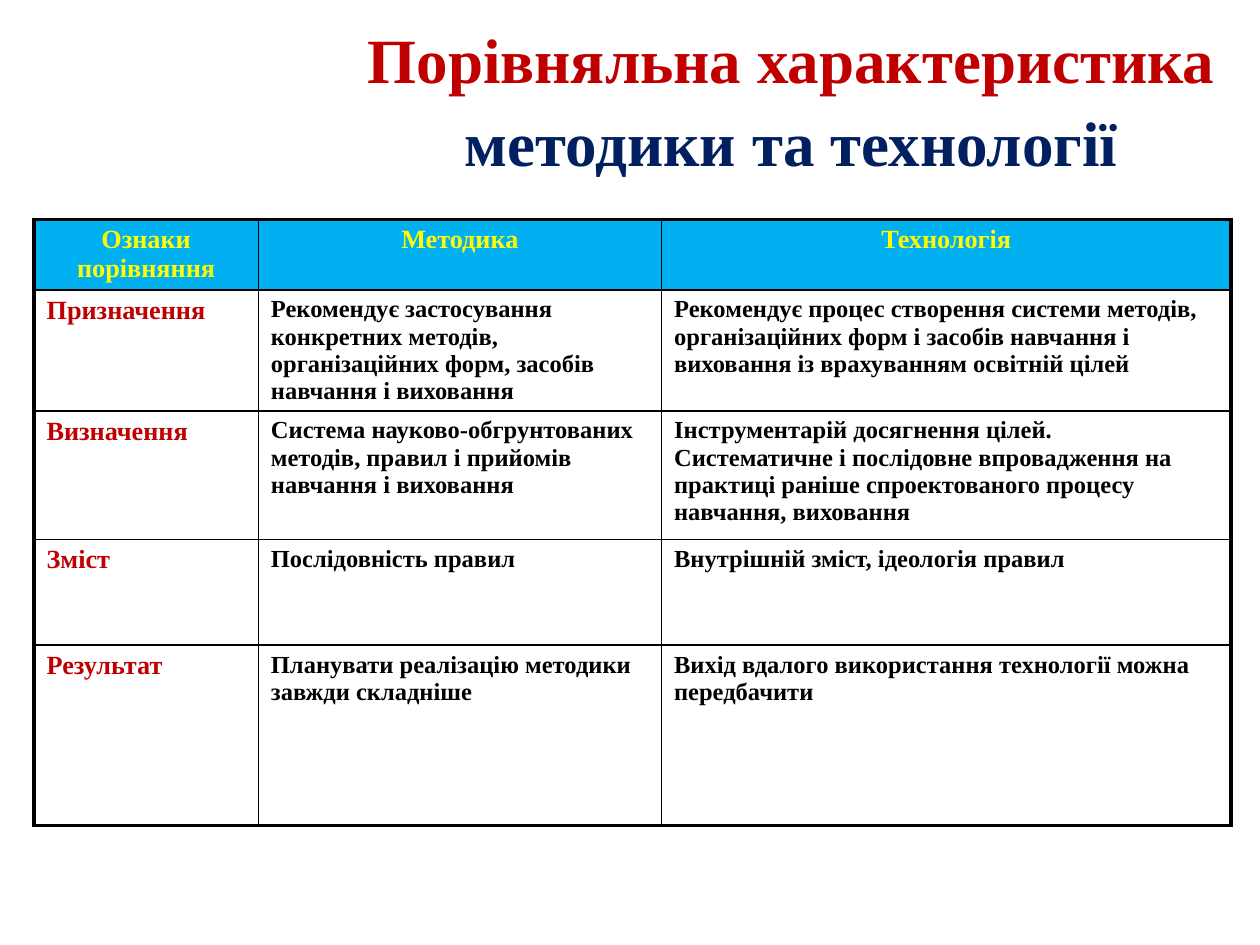
import pptx
import pptx.util
import pptx.dml.color
import pptx.enum.text
import pptx.oxml.ns
from lxml import etree

Inches, Pt = pptx.util.Inches, pptx.util.Pt
PP_ALIGN = pptx.enum.text.PP_ALIGN

# Content
TITLE = [("Порівняльна характеристика ", "red"), ("методики та технології", "navy")]
ROWS = [
    ("Ознаки порівняння", "Методика", "Технологія"),
    ("Призначення",
     "Рекомендує застосування конкретних методів, організаційних форм, засобів навчання і виховання",
     "Рекомендує процес створення системи методів, організаційних форм і засобів навчання і "
     "виховання із врахуванням освітній цілей"),
    ("Визначення",
     "Система науково-обгрунтованих методів, правил і прийомів навчання і виховання",
     "Інструментарій досягнення цілей.\nСистематичне і послідовне впровадження на практиці "
     "раніше спроектованого процесу навчання, виховання"),
    ("Зміст", "Послідовність правил", "Внутрішній зміст, ідеологія правил"),
    ("Результат", "Планувати реалізацію методики завжди складніше",
     "Вихід вдалого використання технології можна передбачити"),
]
COLUMN_WIDTHS = [1.78, 3.2, 4.52]
ROW_HEIGHTS = [0.55, 0.96, 1.02, 0.84, 1.43]

THEME = {
    "font": "Times New Roman",
    "red": "C00000", "navy": "002060", "yellow": "FFFF00", "black": "000000", "blue": "00B0F0",
    "title_size": 36, "label_size": 15, "body_size": 14,
    "outer_line": 2.25, "inner_line": 1,
}


def format_run(run, size, color):
    run.font.name = THEME["font"]
    run.font.size = Pt(THEME[size])
    run.font.bold = True
    run.font.color.rgb = pptx.dml.color.RGBColor.from_string(THEME[color])


def set_borders(cell, outer_sides):
    """Draw all four borders, heavier on the sides at the table edge."""
    properties = cell._tc.get_or_add_tcPr()
    qn = pptx.oxml.ns.qn
    for index, side in enumerate("LRTB"):
        width = THEME["outer_line" if side in outer_sides else "inner_line"]
        line = etree.Element(qn(f"a:ln{side}"), w=str(int(Pt(width))))
        fill = etree.SubElement(line, qn("a:solidFill"))
        etree.SubElement(fill, qn("a:srgbClr"), val=THEME["black"])
        properties.insert(index, line)


def add_title(slide):
    title = slide.shapes.title
    title.left, title.top, title.width, title.height = map(Inches, (2.56, 0.13, 7.44, 1.26))
    frame = title.text_frame
    frame.word_wrap = True
    frame.auto_size = pptx.enum.text.MSO_AUTO_SIZE.NONE
    frame.vertical_anchor = pptx.enum.text.MSO_ANCHOR.MIDDLE
    paragraph = frame.paragraphs[0]
    paragraph.alignment = PP_ALIGN.CENTER
    paragraph.line_spacing = 1.1
    for text, color in TITLE:
        run = paragraph.add_run()
        run.text = text
        format_run(run, "title_size", color)


def add_comparison_table(slide):
    last_row, last_column = len(ROWS) - 1, len(COLUMN_WIDTHS) - 1
    table = slide.shapes.add_table(
        len(ROWS), len(COLUMN_WIDTHS), Inches(0.27), Inches(1.74),
        Inches(sum(COLUMN_WIDTHS)), Inches(sum(ROW_HEIGHTS))).table
    table.horz_banding = False
    for column, width in zip(table.columns, COLUMN_WIDTHS):
        column.width = Inches(width)
    for row, height in zip(table.rows, ROW_HEIGHTS):
        row.height = Inches(height)

    for i, texts in enumerate(ROWS):
        for j, text in enumerate(texts):
            cell = table.cell(i, j)
            cell.text_frame.text = text
            # Header row, label column and body each have their own style
            if i == 0:
                size, color = "label_size", "yellow"
                cell.fill.solid()
                cell.fill.fore_color.rgb = pptx.dml.color.RGBColor.from_string(THEME["blue"])
            else:
                size, color = ("label_size", "red") if j == 0 else ("body_size", "black")
                cell.fill.background()
            for paragraph in cell.text_frame.paragraphs:
                paragraph.alignment = PP_ALIGN.CENTER if i == 0 else PP_ALIGN.LEFT
                for run in paragraph.runs:
                    format_run(run, size, color)
            edges = {"L": j == 0, "R": j == last_column, "T": i == 0, "B": i == last_row}
            set_borders(cell, [side for side, outer in edges.items() if outer])


def main():
    presentation = pptx.Presentation()
    presentation.slide_width, presentation.slide_height = Inches(10), Inches(7.5)
    slide = presentation.slides.add_slide(presentation.slide_layouts.get_by_name("Title Only"))
    add_title(slide)
    add_comparison_table(slide)
    presentation.save("out.pptx")


if __name__ == "__main__":
    main()
